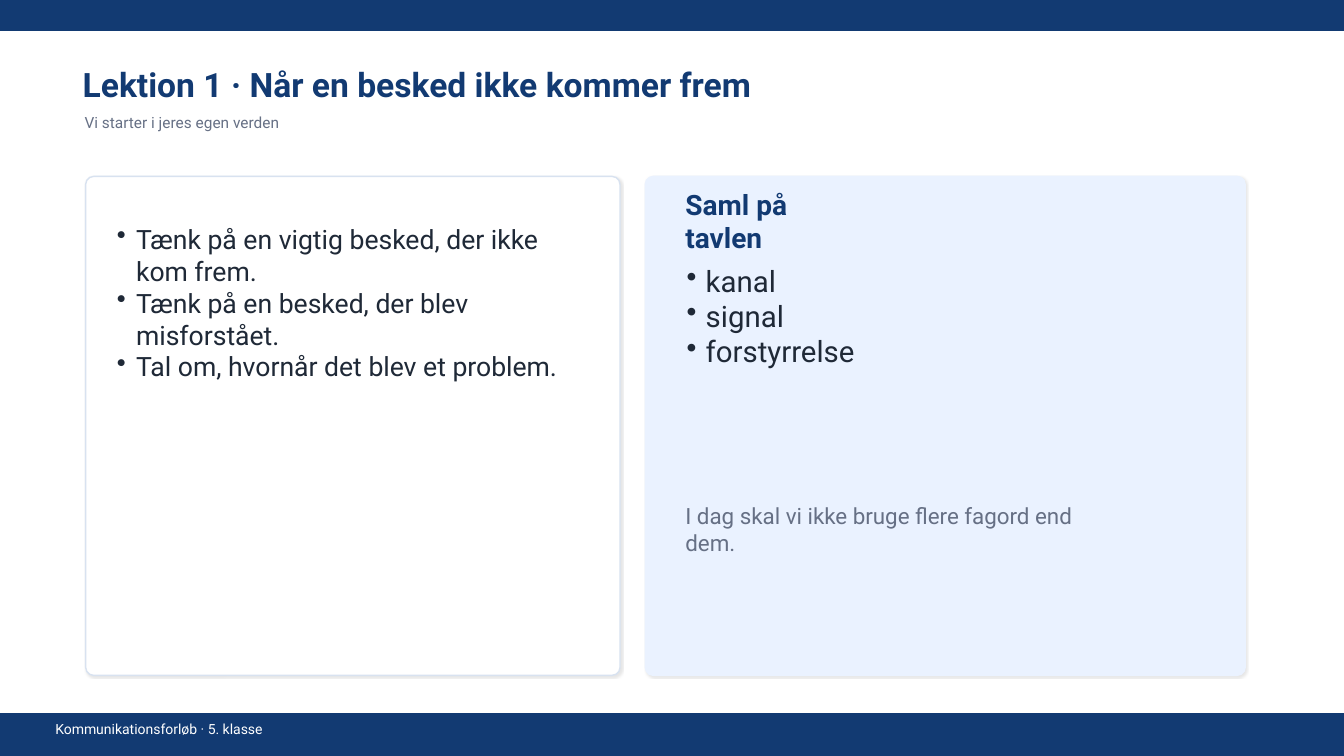
import dataclasses

import pptx
import pptx.dml.color
import pptx.enum.shapes
import pptx.enum.text
import pptx.oxml
import pptx.oxml.ns
import pptx.util
from lxml import etree

PX = 9144  # EMU per px, 100 px to the inch
WIDTH, HEIGHT = 1333, 750
SHAPES = pptx.enum.shapes.MSO_SHAPE
ANCHOR = pptx.enum.text.MSO_ANCHOR


@dataclasses.dataclass(frozen=True)
class Theme:
    font: str = "Roboto"
    navy: str = "123A72"
    white: str = "FFFFFF"
    ice: str = "EAF2FF"
    border: str = "D8E2F0"
    ink: str = "1F2937"
    muted: str = "667085"
    title: int = 24
    heading: int = 20
    task: int = 19
    term: int = 21
    note: int = 16
    subtitle: int = 11
    footer: int = 10


def emu(*lengths):
    return [pptx.util.Emu(length * PX) for length in lengths]


def rgb(colour):
    return pptx.dml.color.RGBColor.from_string(colour)


def add_element(parent, tag, **attributes):
    return etree.SubElement(parent, pptx.oxml.ns.qn(tag), attributes)


class Lesson:
    def __init__(self, presentation, theme):
        self.theme = theme
        self.slide = presentation.slides.add_slide(presentation.slide_layouts[5])

    def block(self, kind, at, fill, line):
        block = self.slide.shapes.add_shape(kind, *emu(*at))
        block.shadow.inherit = False
        block.fill.solid()
        block.fill.fore_color.rgb = rgb(fill)
        block.line.color.rgb = rgb(line)
        block.line.width = pptx.util.Pt(1)
        return block

    def bar(self, top, height):
        self.block(SHAPES.RECTANGLE, (0, top, WIDTH, height), self.theme.navy, self.theme.navy)

    def card(self, at, fill, line):
        """Add a rounded panel with a faint shadow."""
        card = self.block(SHAPES.ROUNDED_RECTANGLE, at, fill, line)
        card.adjustments[0] = 0.016
        effects = card._element.spPr.find(pptx.oxml.ns.qn("a:effectLst"))
        shadow = add_element(effects, "a:outerShdw", blurRad="12700", dist="15240",
                             dir="2700000", algn="ctr", rotWithShape="0")
        black = add_element(shadow, "a:srgbClr", val="000000")
        add_element(black, "a:alpha", val="10000")

    def style(self, paragraph, size, colour, bold=False):
        font = paragraph.font
        font.name = self.theme.font
        font.size = pptx.util.Pt(size)
        font.bold = bold
        font.color.rgb = rgb(colour)
        paragraph.alignment = pptx.enum.text.PP_ALIGN.LEFT

    def fill_line(self, frame, text, size, colour, bold):
        frame.word_wrap = True
        frame.auto_size = pptx.enum.text.MSO_AUTO_SIZE.NONE
        frame.vertical_anchor = ANCHOR.MIDDLE
        frame.text = text
        self.style(frame.paragraphs[0], size, colour, bold)

    def title(self, at, text):
        title = self.slide.shapes.title
        title.left, title.top, title.width, title.height = emu(*at)
        self.fill_line(title.text_frame, text, self.theme.title, self.theme.navy, True)

    def label(self, at, text, size, colour, bold=False):
        label = self.slide.shapes.add_textbox(*emu(*at))
        self.fill_line(label.text_frame, text, size, colour, bold)

    def bullets(self, at, items, size):
        frame = self.slide.shapes.add_textbox(*emu(*at)).text_frame
        frame.word_wrap = True
        frame.vertical_anchor = ANCHOR.TOP
        frame.margin_left, frame.margin_top, frame.margin_right, frame.margin_bottom = emu(6, 6, 6, 6)
        frame.text = "\n".join(items)
        indent = 19 * PX
        for paragraph in frame.paragraphs:
            properties = paragraph._p.get_or_add_pPr()
            properties.set("marL", str(indent))
            properties.set("indent", str(-indent))
            add_element(properties, "a:buChar", char="•")
            self.style(paragraph, size, self.theme.ink)


def main():
    presentation = pptx.Presentation()
    presentation.slide_width, presentation.slide_height = emu(WIDTH, HEIGHT)
    theme = Theme()
    lesson = Lesson(presentation, theme)

    lesson.bar(0, 30)
    lesson.bar(708, 42)
    lesson.label((45, 716, 800, 15), "Kommunikationsforløb · 5. klasse", theme.footer, theme.white)

    lesson.title((72, 62, 1110, 42), "Lektion 1 · Når en besked ikke kommer frem")
    lesson.label((74, 110, 1080, 22), "Vi starter i jeres egen verden", theme.subtitle, theme.muted)

    lesson.card((85, 175, 530, 495), theme.white, theme.border)
    lesson.bullets((110, 215, 450, 210), [
        "Tænk på en vigtig besked, der ikke kom frem.",
        "Tænk på en besked, der blev misforstået.",
        "Tal om, hvornår det blev et problem.",
    ], theme.task)

    lesson.card((640, 175, 595, 495), theme.ice, theme.ice)
    lesson.label((670, 205, 200, 28), "Saml på tavlen", theme.heading, theme.navy, bold=True)
    lesson.bullets((675, 255, 230, 150), ["kanal", "signal", "forstyrrelse"], theme.term)
    lesson.label((670, 505, 420, 40), "I dag skal vi ikke bruge flere fagord end dem.",
                 theme.note, theme.muted)

    presentation.save("out.pptx")


if __name__ == "__main__":
    main()
